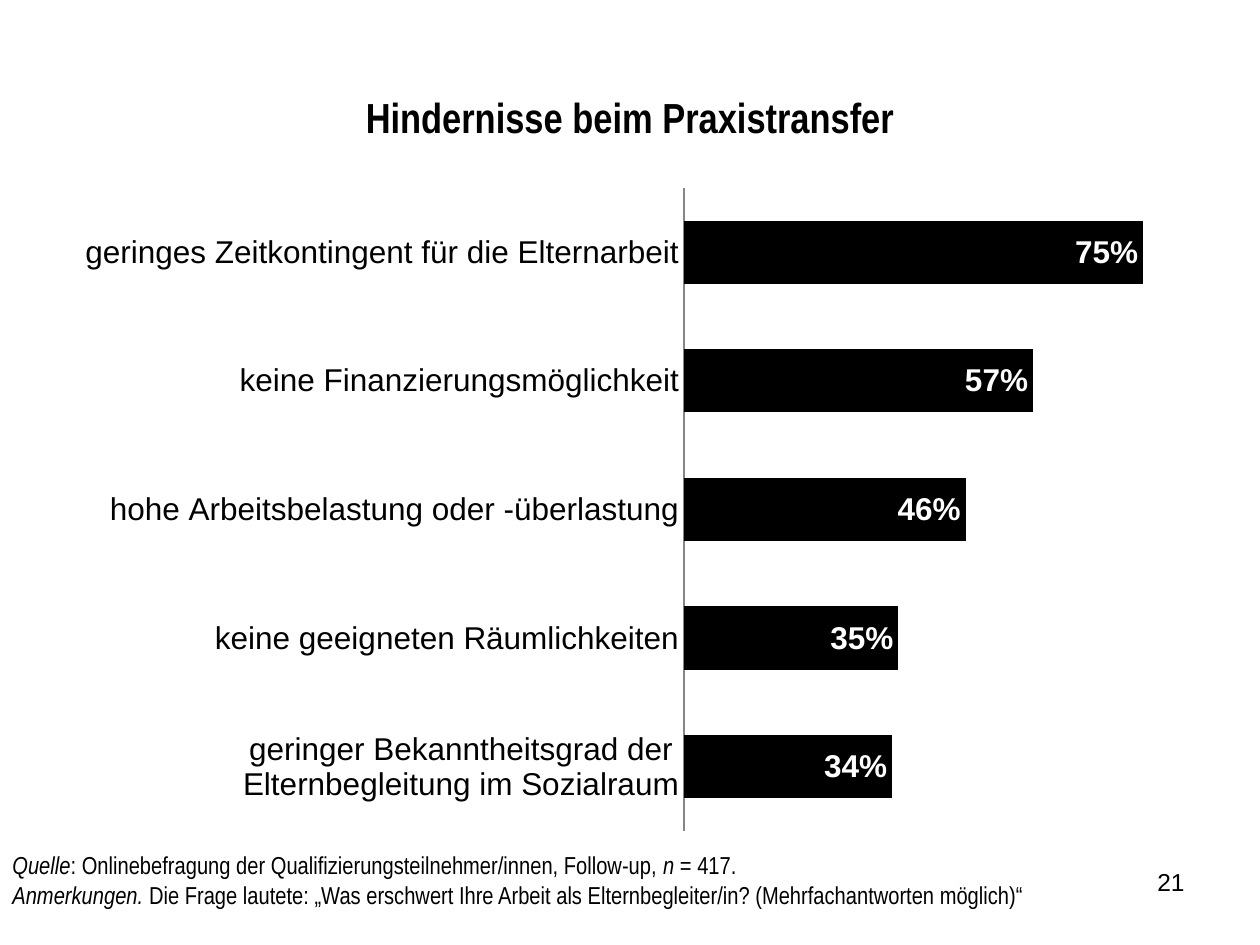
from lxml.etree import SubElement
from pptx import Presentation
from pptx.chart.data import CategoryChartData
from pptx.dml.color import RGBColor
from pptx.enum.chart import XL_CHART_TYPE, XL_LABEL_POSITION, XL_TICK_MARK
from pptx.enum.text import MSO_ANCHOR, PP_ALIGN
from pptx.oxml.ns import qn
from pptx.util import Emu, Pt

SCALE = 914400 / 126
BLACK, WHITE, GRAY = "000000", "FFFFFF", "868686"
NARROW = "Arial Narrow"

TITLE = [[("Hindernisse beim Praxistransfer", False)]]
NOTES = [
    [("Quelle", True),
     (": Onlinebefragung der Qualifizierungsteilnehmer/innen, Follow-up, ", False),
     ("n", True), (" = 417.", False)],
    [("Anmerkungen.", True),
     (" Die Frage lautete: „Was erschwert Ihre Arbeit als Elternbegleiter/in? "
      "(Mehrfachantworten möglich)“", False)],
]
PAGE_NUMBER = [[("21", False)]]
OBSTACLES = [
    ("geringer Bekanntheitsgrad der Elternbegleitung im Sozialraum", 34),
    ("keine geeigneten Räumlichkeiten", 35),
    ("hohe Arbeitsbelastung oder -überlastung", 46),
    ("keine Finanzierungsmöglichkeit", 57),
    ("geringes Zeitkontingent für die Elternarbeit", 75),
]
CHART_AREA = (63, 175, 1134, 669)
PLOT_AREA = (684, 188, 490, 643)


def px(*lengths):
    return [Emu(round(length * SCALE)) for length in lengths]


def color(value):
    return RGBColor.from_string(value)


def style(font, size, name=NARROW, bold=False, italic=False, fill=BLACK):
    font.size, font.name, font.bold, font.italic = Pt(size), name, bold, italic
    font.color.rgb = color(fill)


def add_text(page, area, paragraphs, align=PP_ALIGN.LEFT, anchor=MSO_ANCHOR.TOP, **font):
    frame = page.shapes.add_textbox(*px(*area)).text_frame
    frame.word_wrap = True
    frame.vertical_anchor = anchor
    for index, spans in enumerate(paragraphs):
        para = frame.add_paragraph() if index else frame.paragraphs[0]
        para.alignment = align
        for text, italic in spans:
            span = para.add_run()
            span.text = text
            style(span.font, italic=italic, **font)


def place_plot(chart):
    plot_area = chart.plots[0]._element.getparent()
    for old in plot_area.findall(qn("c:layout")):
        plot_area.remove(old)
    layout = SubElement(plot_area, qn("c:layout"))
    plot_area.insert(0, layout)
    manual = SubElement(layout, qn("c:manualLayout"))
    left, top, width, height = CHART_AREA
    x, y, w, h = PLOT_AREA
    settings = [("layoutTarget", "inner"), ("xMode", "edge"), ("yMode", "edge"),
                ("x", (x - left) / width), ("y", (y - top) / height),
                ("w", w / width), ("h", h / height)]
    for tag, value in settings:
        SubElement(manual, qn(f"c:{tag}")).set("val", str(value))


def add_bars(page):
    data = CategoryChartData(number_format='0"%"')
    data.categories = [name for name, _ in OBSTACLES]
    data.add_series("Series 1", [share for _, share in OBSTACLES])
    chart = page.shapes.add_chart(
        XL_CHART_TYPE.BAR_CLUSTERED, *px(*CHART_AREA), data).chart
    chart.has_legend = chart.has_title = False
    style(chart.font, 18, "Arial")

    names, shares = chart.category_axis, chart.value_axis
    names.major_tick_mark = names.minor_tick_mark = XL_TICK_MARK.NONE
    names.format.line.color.rgb = color(GRAY)
    names.format.line.width = Pt(0.75)
    shares.minimum_scale, shares.maximum_scale = 0, 80
    shares.has_major_gridlines = shares.visible = False

    plot = chart.plots[0]
    plot.gap_width, plot.overlap, plot.vary_by_categories = 103, -24, False
    bars = plot.series[0]
    bars.format.fill.solid()
    bars.format.fill.fore_color.rgb = color(BLACK)
    labels = bars.data_labels
    labels.show_value = True
    labels.position = XL_LABEL_POSITION.INSIDE_END
    labels.number_format, labels.number_format_is_linked = '0"%"', False
    style(labels.font, 18, "Arial", bold=True, fill=WHITE)
    place_plot(chart)


def main():
    """Build the slide on obstacles to putting training into practice."""
    deck = Presentation()
    deck.slide_width, deck.slide_height = px(1260, 945)
    page = deck.slides.add_slide(deck.slide_layouts[6])
    add_text(page, (63, 38, 1134, 158), TITLE, size=24, bold=True,
             align=PP_ALIGN.CENTER, anchor=MSO_ANCHOR.MIDDLE)
    add_text(page, (0, 844, 1206, 82), NOTES, size=14)
    add_text(page, (903, 861, 294, 65), PAGE_NUMBER, size=14, name="Arial",
             align=PP_ALIGN.RIGHT)
    add_bars(page)
    deck.save("out.pptx")


if __name__ == "__main__":
    main()
